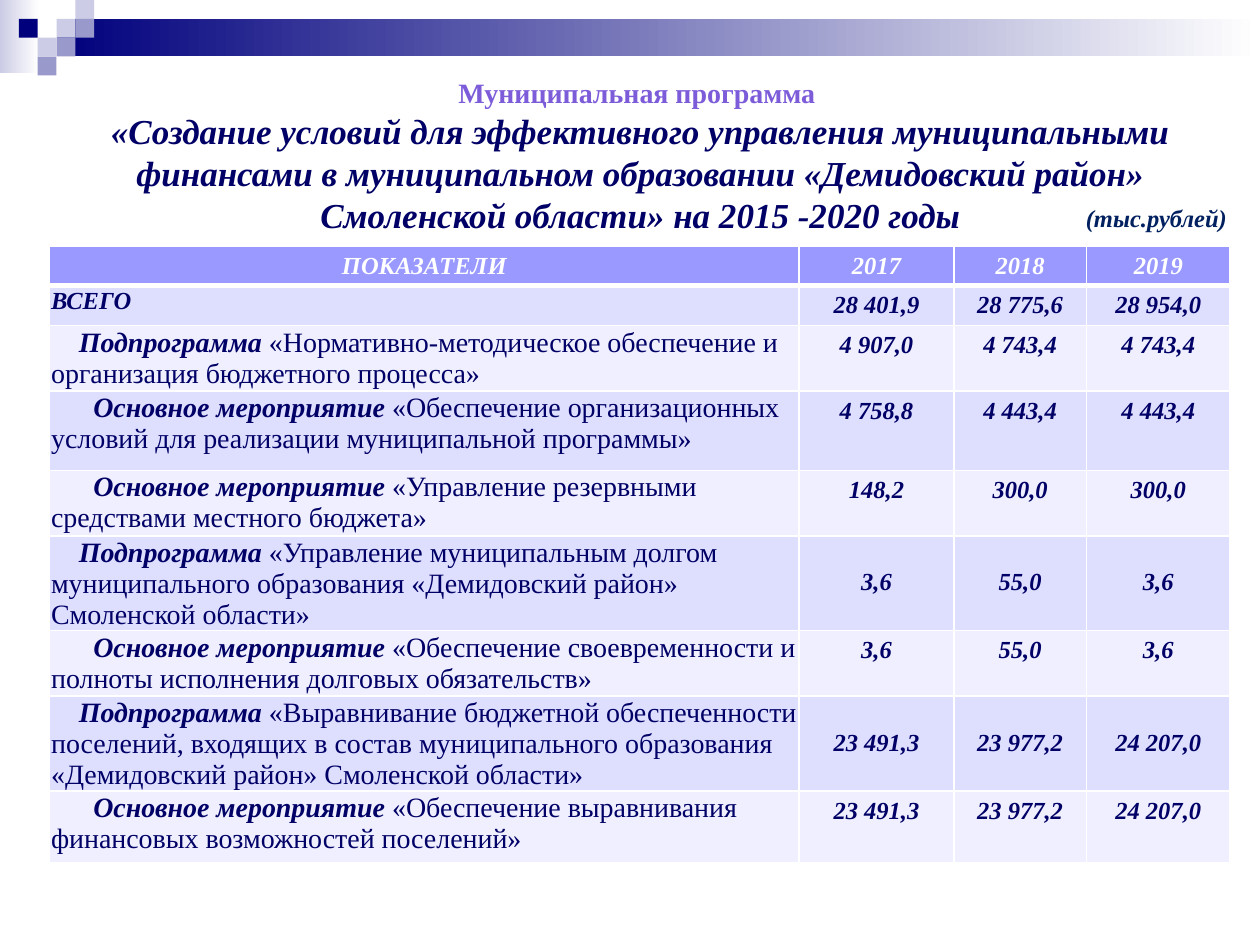
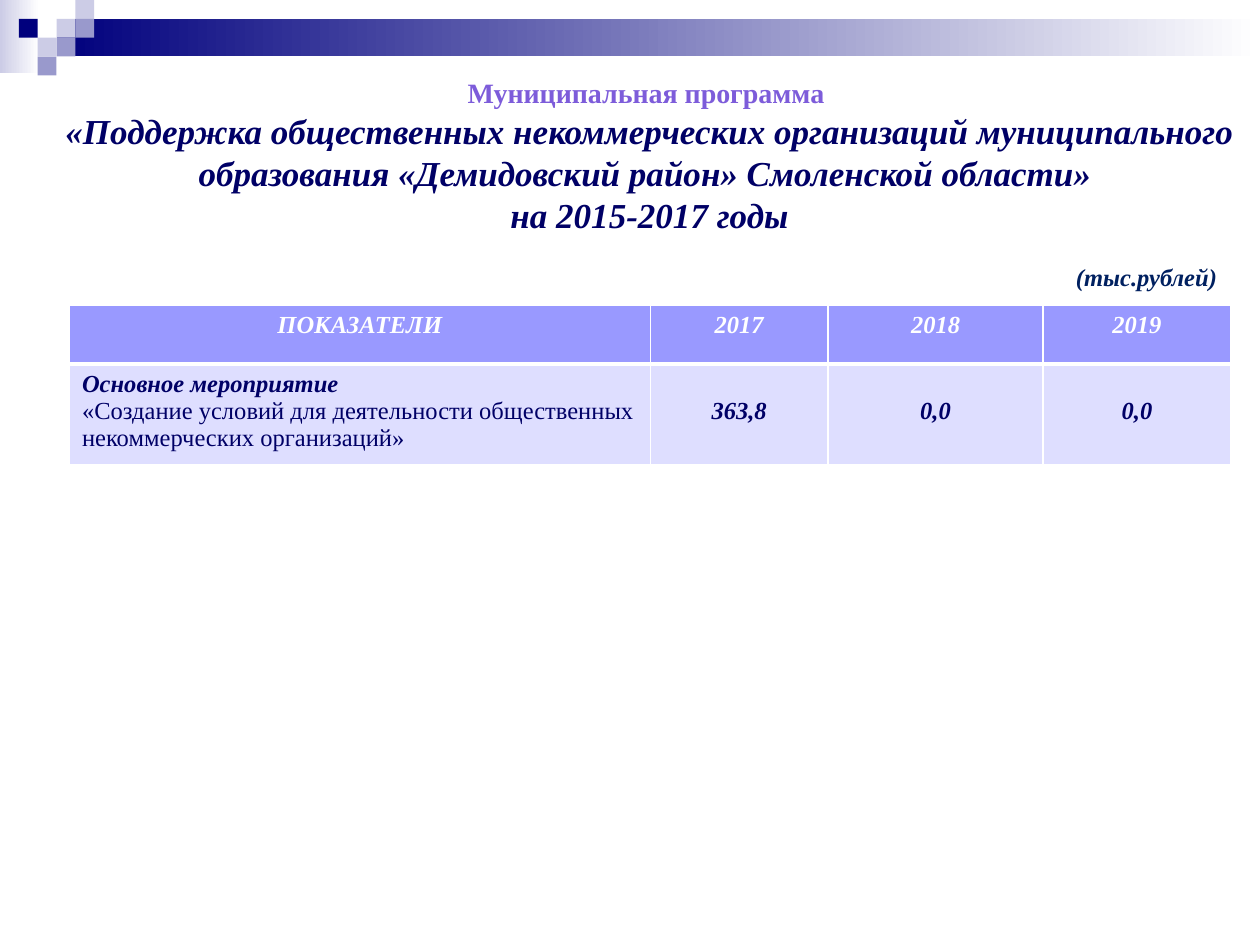
import pptx
import pptx.dml.color
import pptx.enum.shapes
import pptx.enum.text
import pptx.oxml
import pptx.oxml.ns
import pptx.util
from dataclasses import dataclass

Cm = pptx.util.Cm
Pt = pptx.util.Pt
RGBColor = pptx.dml.color.RGBColor
Align = pptx.enum.text.PP_ALIGN

FONT = "Times New Roman"
WHITE = RGBColor(0xFF, 0xFF, 0xFF)
NAVY = RGBColor(0x00, 0x00, 0x7D)
LAVENDER = RGBColor(0x99, 0x99, 0xCC)
PALE = RGBColor(0xCC, 0xCC, 0xE6)
VIOLET = RGBColor(0x7D, 0x5C, 0xDA)
INK = RGBColor(0x00, 0x00, 0x66)
UNIT_BLUE = RGBColor(0x00, 0x20, 0x60)
HEADER_FILL = RGBColor(0x99, 0x99, 0xFF)
ROW_FILLS = (RGBColor(0xDE, 0xDE, 0xFF), RGBColor(0xEF, 0xEF, 0xFF))

SQUARE = 0.38
MOSAIC = (
    (3, 1, PALE), (4, 0, PALE), (4, 1, LAVENDER), (2, 2, PALE),
    (1, 1, NAVY), (3, 2, LAVENDER), (2, 3, LAVENDER),
)
HEADINGS = ("ПОКАЗАТЕЛИ", "2017", "2018", "2019")
SUBPROGRAM = "Подпрограмма "
ACTIVITY = "Основное мероприятие "
SUBPROGRAM_INDENT = 0.56
ACTIVITY_INDENT = 0.85
TIGHT_MARGIN = 0.03
LOWERED_TOP = 0.67


@dataclass
class Indicator:
    lead: str
    name: str
    amounts: tuple
    height: float
    indent: float = 0
    size: int = 16
    lowered: bool = False


FINANCE_INDICATORS = (
    Indicator("ВСЕГО", "", ("28 401,9", "28 775,6", "28 954,0"), 0.79, size=14),
    Indicator(SUBPROGRAM, "«Нормативно-методическое обеспечение и организация бюджетного процесса»",
              ("4 907,0", "4 743,4", "4 743,4"), 1.32, SUBPROGRAM_INDENT),
    Indicator(ACTIVITY, "«Обеспечение организационных условий для реализации муниципальной программы»",
              ("4 758,8", "4 443,4", "4 443,4"), 1.6, ACTIVITY_INDENT),
    Indicator(ACTIVITY, "«Управление резервными средствами местного бюджета»",
              ("148,2", "300,0", "300,0"), 1.32, ACTIVITY_INDENT),
    Indicator(SUBPROGRAM, "«Управление муниципальным долгом муниципального образования "
              "«Демидовский район» Смоленской области»",
              ("3,6", "55,0", "3,6"), 1.89, SUBPROGRAM_INDENT, lowered=True),
    Indicator(ACTIVITY, "«Обеспечение своевременности и полноты исполнения долговых обязательств»",
              ("3,6", "55,0", "3,6"), 1.32, ACTIVITY_INDENT),
    Indicator(SUBPROGRAM, "«Выравнивание бюджетной обеспеченности поселений, входящих в состав "
              "муниципального образования «Демидовский район» Смоленской области»",
              ("23 491,3", "23 977,2", "24 207,0"), 1.89, SUBPROGRAM_INDENT, lowered=True),
    Indicator(ACTIVITY, "«Обеспечение выравнивания финансовых возможностей поселений»",
              ("23 491,3", "23 977,2", "24 207,0"), 1.44, ACTIVITY_INDENT),
)
SUPPORT_INDICATORS = (
    Indicator("Основное мероприятие",
              "«Создание условий для деятельности общественных некоммерческих организаций»",
              ("363,8", "0,0", "0,0"), 1.99, size=14, lowered=True),
)


def add_run(paragraph, text, size, color, bold=True, italic=True):
    run = paragraph.add_run()
    run.text = text
    run.font.name = FONT
    run.font.size = Pt(size)
    run.font.color.rgb = color
    run.font.bold = bold
    run.font.italic = italic


def add_block(slide, left, top, width, height, *colors):
    block = slide.shapes.add_shape(pptx.enum.shapes.MSO_SHAPE.RECTANGLE,
                                   Cm(left), Cm(top), Cm(width), Cm(height))
    block.shadow.inherit = False
    block.line.fill.background()
    if len(colors) == 1:
        block.fill.solid()
        block.fill.fore_color.rgb = colors[0]
        return
    block.fill.gradient()
    block.fill.gradient_angle = 0
    for stop, color, position in zip(block.fill.gradient_stops, colors, (0, 1)):
        stop.color.rgb = color
        stop.position = position


def add_header_band(slide):
    add_block(slide, 0, 0, 0.79, 1.47, PALE, WHITE)
    add_block(slide, 3 * SQUARE, SQUARE, 25.4 - 3 * SQUARE, 2 * SQUARE, NAVY, WHITE)
    for column, row, color in MOSAIC:
        add_block(slide, column * SQUARE, row * SQUARE, SQUARE, SQUARE, color)


def add_text_frame(slide, left, top, width, height, wrap):
    frame = slide.shapes.add_textbox(Cm(left), Cm(top), Cm(width), Cm(height)).text_frame
    frame.word_wrap = wrap
    frame.auto_size = pptx.enum.text.MSO_AUTO_SIZE.SHAPE_TO_FIT_TEXT
    return frame


def add_title(slide, left, width, *program_lines):
    frame = add_text_frame(slide, left, 1.4, width, 3.5, True)
    caption = frame.paragraphs[0]
    caption.alignment = Align.CENTER
    add_run(caption, "Муниципальная программа ", 16, VIOLET, italic=False)
    for line in program_lines:
        paragraph = frame.add_paragraph()
        paragraph.alignment = Align.CENTER
        add_run(paragraph, line, 20, INK)


def add_unit(slide, left, top):
    frame = add_text_frame(slide, left, top, 3.38, 0.86, False)
    add_run(frame.paragraphs[0], "(тыс.рублей)", 14, UNIT_BLUE)


def style_cell(cell, fill, top_line=1, bottom_line=1):
    cell.fill.solid()
    cell.fill.fore_color.rgb = fill
    properties = cell._tc.get_or_add_tcPr()
    edges = (("L", 1), ("R", 1), ("T", top_line), ("B", bottom_line))
    for index, (edge, weight) in enumerate(edges):
        properties.insert(index, pptx.oxml.parse_xml(
            f'<a:ln{edge} {pptx.oxml.ns.nsdecls("a")} w="{Pt(weight)}">'
            f'<a:solidFill><a:srgbClr val="{WHITE}"/></a:solidFill></a:ln{edge}>'))


def fill_centred(cell, text, color):
    paragraph = cell.text_frame.paragraphs[0]
    paragraph.alignment = Align.CENTER
    add_run(paragraph, text, 14, color)


def fill_label(cell, indicator, tight):
    paragraph = cell.text_frame.paragraphs[0]
    add_run(paragraph, indicator.lead, indicator.size, INK)
    if tight:
        cell.margin_left = cell.margin_right = cell.margin_top = Cm(TIGHT_MARGIN)
        cell.margin_bottom = 0
        paragraph._p.get_or_add_pPr().set("indent", str(Cm(indicator.indent)))
    else:
        paragraph = cell.text_frame.add_paragraph()
    if indicator.name:
        add_run(paragraph, indicator.name, indicator.size, INK, bold=False, italic=False)


def add_indicator_table(slide, left, top, widths, header_height, indicators, tight):
    heights = [header_height] + [indicator.height for indicator in indicators]
    table = slide.shapes.add_table(len(heights), len(widths), Cm(left), Cm(top),
                                   Cm(sum(widths)), Cm(sum(heights))).table
    table.horz_banding = False
    for column, width in zip(table.columns, widths):
        column.width = Cm(width)
    for row, height in zip(table.rows, heights):
        row.height = Cm(height)
    for column, heading in enumerate(HEADINGS):
        cell = table.cell(0, column)
        style_cell(cell, HEADER_FILL, bottom_line=3)
        fill_centred(cell, heading, WHITE)
    for row, indicator in enumerate(indicators, 1):
        for column in range(len(widths)):
            style_cell(table.cell(row, column), ROW_FILLS[(row - 1) % 2],
                       top_line=3 if row == 1 else 1)
        fill_label(table.cell(row, 0), indicator, tight)
        for column, amount in enumerate(indicator.amounts, 1):
            cell = table.cell(row, column)
            if indicator.lowered:
                cell.margin_top = Cm(LOWERED_TOP)
            fill_centred(cell, amount, INK)


def add_program_slide(presentation):
    slide = presentation.slides.add_slide(presentation.slide_layouts[6])
    add_header_band(slide)
    return slide


def main():
    presentation = pptx.Presentation()
    presentation.slide_width = Cm(25.4)
    presentation.slide_height = Cm(19.05)

    finance = add_program_slide(presentation)
    add_indicator_table(finance, 1, 4.96, (15.11, 3.12, 2.67, 2.9), 0.79,
                        FINANCE_INDICATORS, tight=True)
    add_title(finance, 1, 23.82,
              "«Создание условий для эффективного управления муниципальными финансами "
              "в муниципальном образовании «Демидовский район» Смоленской области» "
              "на 2015 -2020 годы")
    add_unit(finance, 21.64, 3.96)

    support = add_program_slide(presentation)
    add_title(support, 0.79, 24.61,
              "«Поддержка общественных некоммерческих организаций муниципального "
              "образования «Демидовский район» Смоленской области» ",
              "на 2015-2017 годы")
    add_indicator_table(support, 1.4, 6.15, (11.71, 3.58, 4.34, 3.78), 1.19,
                        SUPPORT_INDICATORS, tight=False)
    add_unit(support, 21.44, 5.16)

    presentation.save("out.pptx")


if __name__ == "__main__":
    main()
